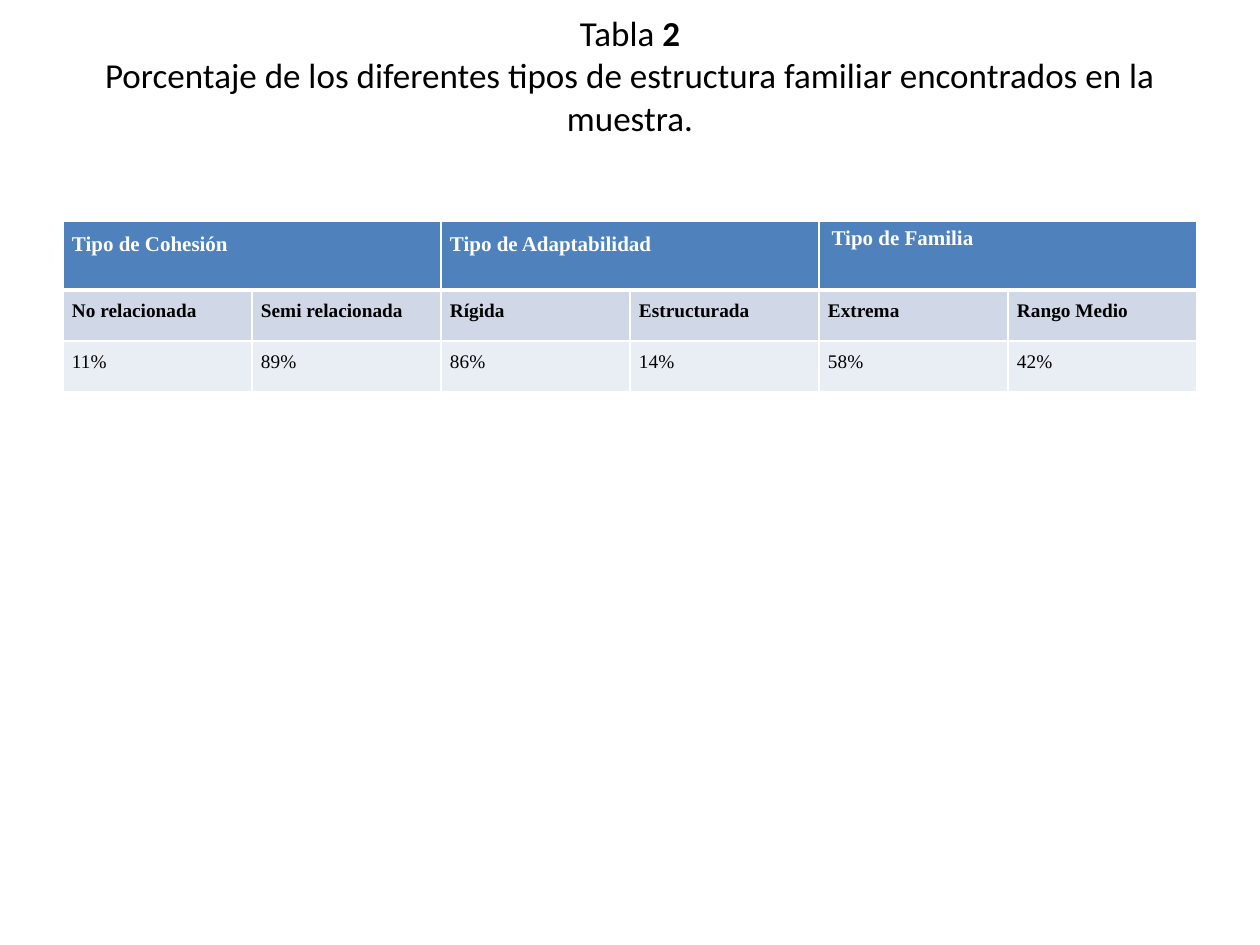
from pptx import Presentation
from pptx import util as u
from pptx.dml.color import RGBColor
from pptx.enum import text
from pptx.oxml import parse_xml
from pptx.oxml.ns import nsdecls

PX = 914400 / 126
WHITE, BLACK = "FFFFFF", "000000"
HEADER, BAND, LIGHT = "4F81BD", "D0D8E8", "E9EDF4"
COL, ROWS = 189, (69, 51, 51)
GROUPS = ("Tipo de Cohesión", "Tipo de Adaptabilidad", "Tipo de Familia")
TYPES = ("No relacionada", "Semi relacionada", "Rígida", "Estructurada", "Extrema", "Rango Medio")
SHARES = ("11%", "89%", "86%", "14%", "58%", "42%")


def px(n):
    """Turn whole pixels into EMU."""
    return u.Emu(round(n * PX))


def rgb(value):
    """Turn a hex string into a colour."""
    return RGBColor.from_string(value)


def set_font(font, name, size, color, bold=False):
    """Set the face, size, colour and weight of a font."""
    font.name, font.size, font.bold = name, u.Pt(size), bold
    font.color.rgb = rgb(color)


def add_title(slide):
    """Fill and place the title placeholder."""
    sp = slide.shapes.title
    sp.left, sp.top, sp.width, sp.height = px(63), px(38), px(1134), px(157)
    tf = sp.text_frame
    tf.auto_size = text.MSO_AUTO_SIZE.NONE
    tf.vertical_anchor = text.MSO_ANCHOR.MIDDLE
    tf.margin_top, tf.margin_bottom = 0, px(83)
    p = tf.paragraphs[0]
    p.alignment = text.PP_ALIGN.CENTER
    set_font(p.font, "Calibri", 20, BLACK)
    p.add_run().text = "Tabla "
    r = p.add_run()
    r.text, r.font.bold = "2", True
    p.add_line_break()
    p.add_run().text = "Porcentaje de los diferentes tipos de estructura familiar encontrados en la muestra."


def set_borders(cell, bottom):
    """Draw white borders, with the bottom one as wide as asked."""
    tc_pr = cell._tc.get_or_add_tcPr()
    for i, (side, width) in enumerate((("L", 1), ("R", 1), ("T", 1), ("B", bottom))):
        tc_pr.insert(i, parse_xml(
            f'<a:ln{side} {nsdecls("a")} w="{u.Pt(width)}"><a:solidFill>'
            f'<a:srgbClr val="{WHITE}"/></a:solidFill></a:ln{side}>'))


def paint_cell(cell, fill, bottom=1):
    """Give a cell its fill and borders."""
    cell.fill.solid()
    cell.fill.fore_color.rgb = rgb(fill)
    set_borders(cell, bottom)


def write_cell(cell, words, size, color, bold, align=text.PP_ALIGN.JUSTIFY, spaced=True):
    """Write one formatted paragraph in a cell."""
    p = cell.text_frame.paragraphs[0]
    p.text = words
    set_font(p.font, "Times New Roman", size, color, bold)
    if spaced:
        cell.margin_left = cell.margin_right = px(9)
        cell.margin_top = cell.margin_bottom = 0
        p.alignment, p.line_spacing = align, 1.5


def add_family_table(slide):
    """Add the table of family structure types and their shares."""
    table = slide.shapes.add_table(
        len(ROWS), len(TYPES), px(63), px(221), px(COL * len(TYPES)), px(sum(ROWS))).table
    for row, height in zip(table.rows, ROWS):
        row.height = px(height)
    for c, (kind, share) in enumerate(zip(TYPES, SHARES)):
        table.columns[c].width = px(COL)
        paint_cell(table.cell(0, c), HEADER, 3)
        paint_cell(table.cell(1, c), BAND)
        paint_cell(table.cell(2, c), LIGHT)
        align = text.PP_ALIGN.LEFT if c < 2 else text.PP_ALIGN.JUSTIFY
        write_cell(table.cell(1, c), kind, 11, BLACK, True, align)
        write_cell(table.cell(2, c), share, 11, BLACK, False)
    for g, group in enumerate(GROUPS):
        cell = table.cell(0, 2 * g)
        cell.merge(table.cell(0, 2 * g + 1))
        write_cell(cell, group, 12, WHITE, True, spaced=g < 2)


def main():
    """Build and save the slide."""
    prs = Presentation()
    prs.slide_width, prs.slide_height = px(1260), px(945)
    slide = prs.slides.add_slide(prs.slide_layouts[5])
    add_title(slide)
    add_family_table(slide)
    prs.save("out.pptx")


if __name__ == "__main__":
    main()
